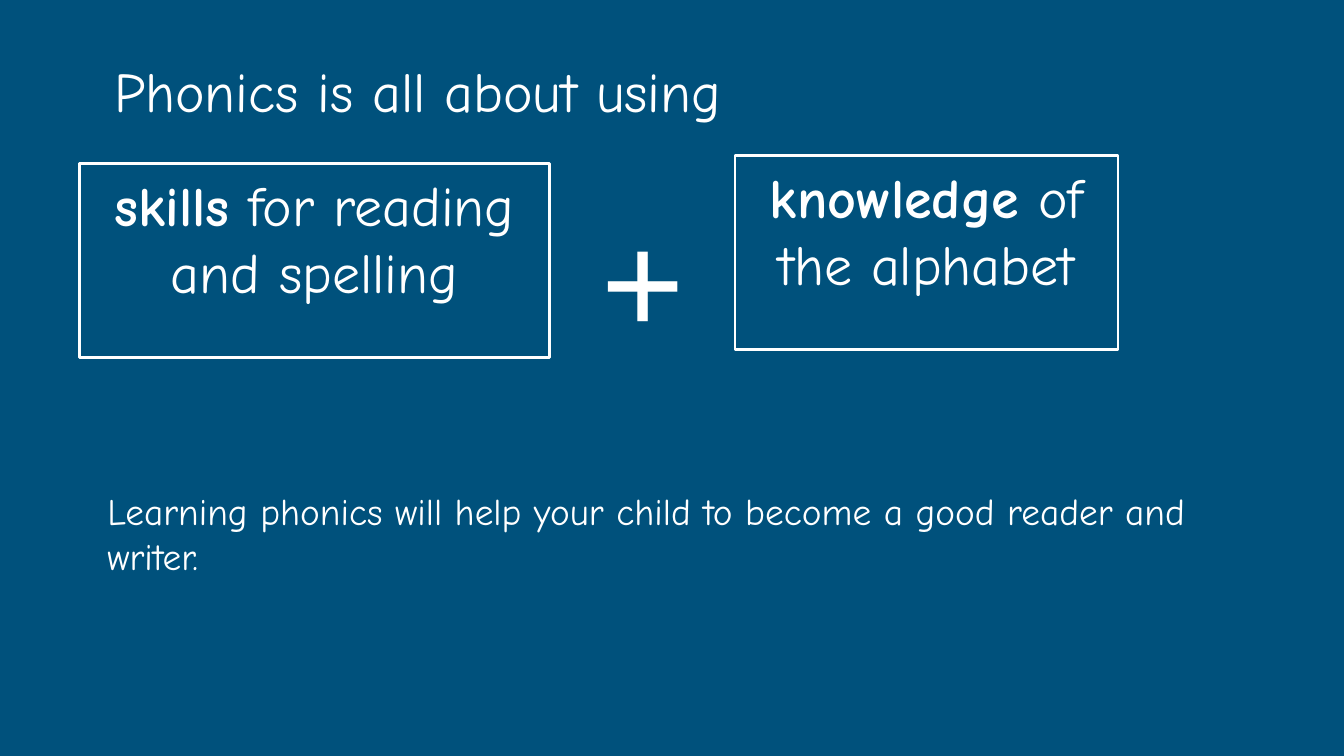
from pptx import Presentation
from pptx.dml.color import RGBColor
from pptx.enum.shapes import MSO_SHAPE
from pptx.enum.text import MSO_ANCHOR, PP_ALIGN
from pptx.util import Pt

RECTANGLE = MSO_SHAPE.RECTANGLE
TOP = MSO_ANCHOR.TOP
LEFT, CENTER = PP_ALIGN.LEFT, PP_ALIGN.CENTER

COLORS = {"background": "00517C", "foreground": "FFFFFF"}
BODY_FONT = "Comic Neue"
SYMBOL_FONT = "Times New Roman"


def color(name):
    return RGBColor.from_string(COLORS[name])


def write(shape, spans, size, font=BODY_FONT, align=LEFT, inset_top=3.6):
    frame = shape.text_frame
    frame.word_wrap = True
    frame.vertical_anchor = TOP
    frame.margin_left = frame.margin_right = Pt(7.2)
    frame.margin_top, frame.margin_bottom = Pt(inset_top), Pt(3.6)
    para = frame.paragraphs[0]
    para.alignment = align
    for text, bold in spans:
        span = para.add_run()
        span.text = text
        span.font.name = font
        span.font.size = Pt(size)
        span.font.bold = bold
        span.font.color.rgb = color("foreground")


def add_label(page, box, spans, size, **options):
    label = page.shapes.add_textbox(*map(Pt, box))
    write(label, spans, size, **options)


def add_framed_idea(page, box, keyword, rest):
    panel = page.shapes.add_shape(RECTANGLE, *map(Pt, box))
    panel.shadow.inherit = False
    panel.fill.background()
    panel.line.color.rgb = color("foreground")
    panel.line.width = Pt(1.5)
    write(panel, [(keyword, True), (rest, False)], 30, align=CENTER)


def add_phonics_page(deck):
    page = deck.slides.add_slide(deck.slide_layouts[6])
    page.background.fill.solid()
    page.background.fill.fore_color.rgb = color("background")

    add_label(page, (54, 26.6, 510.5, 41.8),
              [("Phonics is all about using", False)], 30)
    add_framed_idea(page, (42.5, 87.8, 252, 103.7),
                    "skills", " for reading and spelling")
    add_framed_idea(page, (393.8, 83.5, 205.2, 103.7),
                    "knowledge", " of the alphabet")
    add_label(page, (314.6, 96.5, 60.5, 77.8), [("+", True)], 80,
              font=SYMBOL_FONT)
    add_label(page, (50.4, 214.6, 635, 146.9),
              [("Learning phonics will help your child to become "
                "a good reader and writer.", False)],
              20, inset_top=46.8)


def main():
    deck = Presentation()
    deck.slide_width, deck.slide_height = Pt(720), Pt(405)
    add_phonics_page(deck)
    deck.save("out.pptx")


if __name__ == "__main__":
    main()
